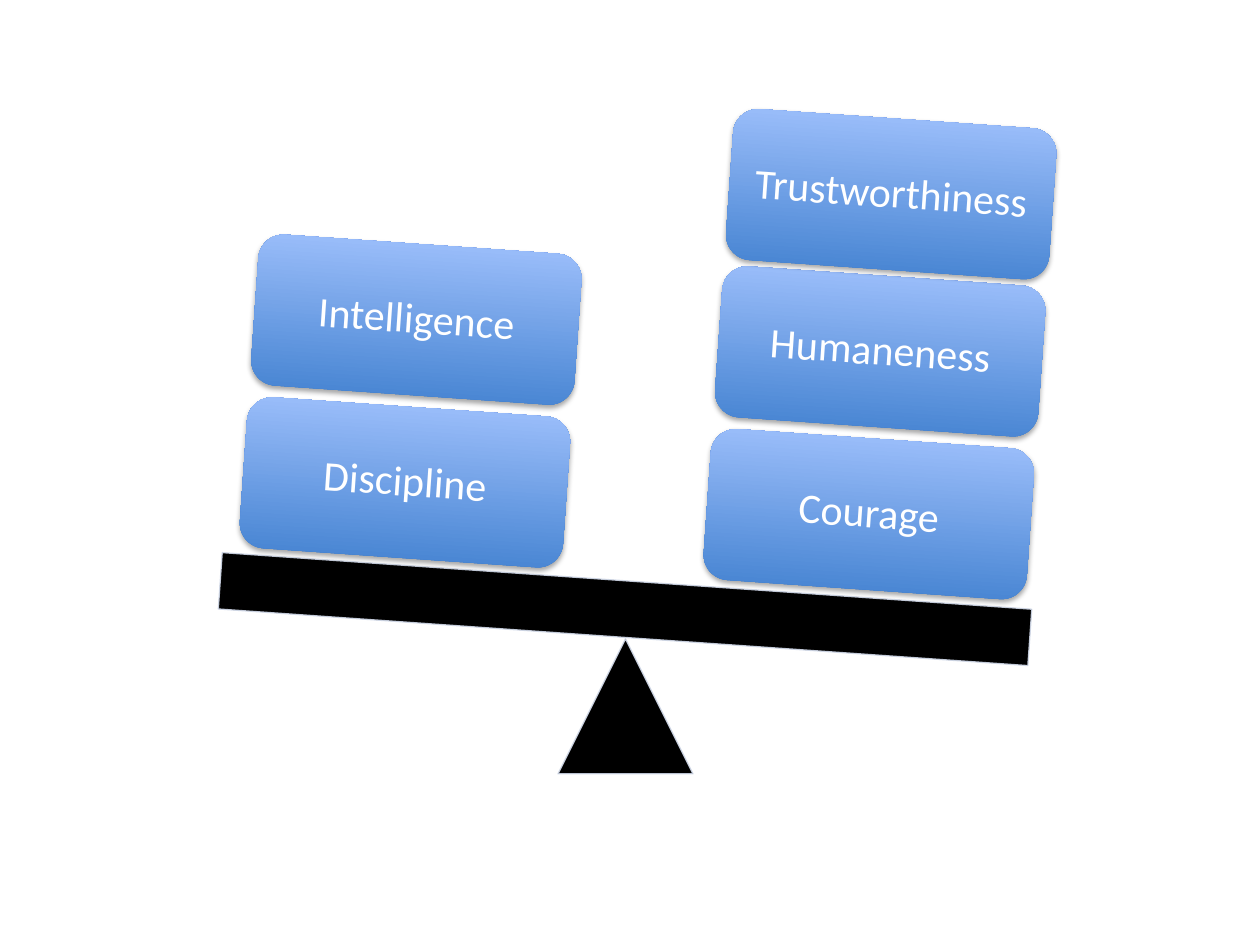
from math import radians, tan

from lxml.etree import SubElement
from pptx import Presentation
from pptx.dml.color import RGBColor
from pptx.enum.shapes import MSO_SHAPE as Shape
from pptx.enum.text import MSO_ANCHOR, PP_ALIGN
from pptx.oxml.ns import qn
from pptx.util import Cm, Pt

# Each stack: left and top of its lowest block in cm, then labels from bottom to top
STACKS = [
    (14.25, 8.84, ["Courage", "Humaneness", "Trustworthiness"]),
    (4.9, 8.2, ["Discipline", "Intelligence"]),
]
RISES = [0, 3.28, 6.45]
BLOCK_WIDTH, BLOCK_HEIGHT = 6.53, 3.05
TILT = 4
GRADIENT = ["3F7FCE", "A4C4FF"]


def color(value):
    return RGBColor.from_string(value)


def add_shape(slide, kind, left, top, width, height, tilt=0):
    shape = slide.shapes.add_shape(kind, Cm(left), Cm(top), Cm(width), Cm(height))
    shape.rotation = tilt
    shape.shadow.inherit = False
    return shape


def add_balance_part(slide, *geometry):
    """Add a black part of the seesaw with a thin pale outline."""
    shape = add_shape(slide, *geometry)
    shape.fill.solid()
    shape.fill.fore_color.rgb = color("000000")
    shape.line.color.rgb = color("D0D8E8")
    shape.line.width = Pt(0.75)
    line_color = shape.line._get_or_add_ln().find(".//" + qn("a:srgbClr"))
    SubElement(line_color, qn("a:alpha"), val="90000")


def add_drop_shadow(shape):
    effects = shape._element.spPr.find(qn("a:effectLst"))
    shadow = SubElement(effects, qn("a:outerShdw"), blurRad=str(Pt(3.1)),
                        dist=str(Pt(1.8)), dir="5400000", rotWithShape="0")
    shadow_color = SubElement(shadow, qn("a:srgbClr"), val="000000")
    SubElement(shadow_color, qn("a:alpha"), val="35000")


def add_block(slide, label, left, top):
    block = add_shape(slide, Shape.ROUNDED_RECTANGLE, left, top,
                      BLOCK_WIDTH, BLOCK_HEIGHT, TILT)
    block.fill.gradient()
    block.fill.gradient_angle = 90
    for stop, value in zip(block.fill.gradient_stops, GRADIENT):
        stop.color.rgb = color(value)
    block.line.fill.background()
    add_drop_shadow(block)

    frame = block.text_frame
    frame.word_wrap = True
    frame.vertical_anchor = MSO_ANCHOR.MIDDLE
    frame.margin_left = frame.margin_right = Cm(0.25)
    frame.margin_top = frame.margin_bottom = Cm(0.25)
    paragraph = frame.paragraphs[0]
    paragraph.alignment = PP_ALIGN.CENTER
    paragraph.line_spacing = 0.9
    run = paragraph.add_run()
    run.text = label
    run.font.name = "Calibri"
    run.font.size = Pt(24)
    run.font.color.rgb = color("FFFFFF")


def main():
    presentation = Presentation()
    presentation.slide_width, presentation.slide_height = Cm(25.4), Cm(19.05)
    slide = presentation.slides.add_slide(presentation.slide_layouts[6])

    add_balance_part(slide, Shape.ISOSCELES_TRIANGLE, 11.25, 12.88, 2.72, 2.72)
    add_balance_part(slide, Shape.RECTANGLE, 4.42, 11.71, 16.36, 1.14, TILT)
    for left, top, labels in STACKS:
        for label, rise in zip(labels, RISES):
            add_block(slide, label, left + rise * tan(radians(TILT)), top - rise)

    presentation.save("out.pptx")


if __name__ == "__main__":
    main()
